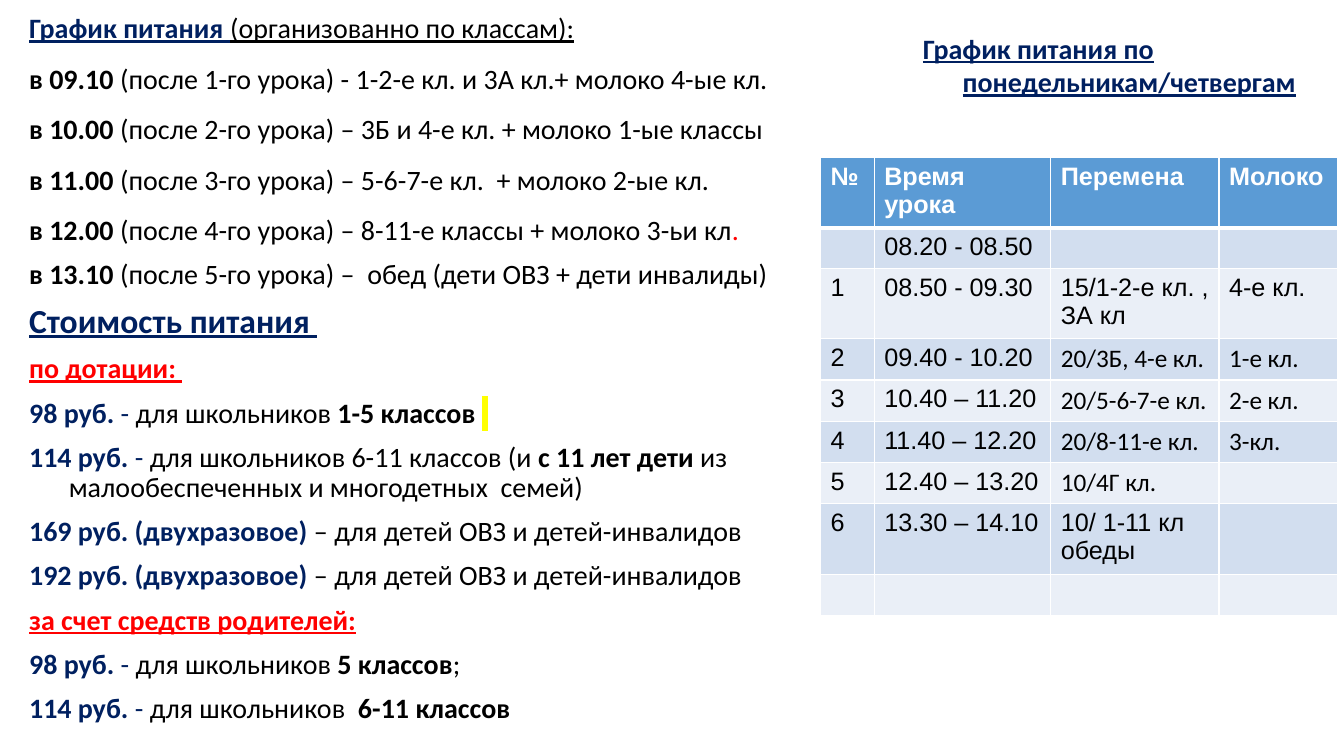
"""Builds the school meals slide: serving times, prices and the Monday/Thursday timetable."""
from dataclasses import dataclass
from typing import Optional

import lxml.etree
import pptx
import pptx.dml.color
import pptx.enum.text
import pptx.oxml.ns
import pptx.util

Cm = pptx.util.Cm
Pt = pptx.util.Pt
RGBColor = pptx.dml.color.RGBColor
qn = pptx.oxml.ns.qn

NAVY = RGBColor(0x00, 0x20, 0x60)
RED = RGBColor(0xFF, 0x00, 0x00)
BLACK = RGBColor(0x00, 0x00, 0x00)
WHITE = RGBColor(0xFF, 0xFF, 0xFF)
YELLOW = RGBColor(0xFF, 0xFF, 0x00)
HEADER_BLUE = RGBColor(0x5B, 0x9B, 0xD5)
BAND_DARK = RGBColor(0xD2, 0xDE, 0xEF)
BAND_LIGHT = RGBColor(0xEA, 0xEF, 0xF7)


@dataclass(frozen=True)
class Span:
    text: str
    bold: bool = False
    color: RGBColor = BLACK
    underline: bool = False
    size: int = 20
    highlight: Optional[RGBColor] = None
    break_after: bool = False


@dataclass(frozen=True)
class Line:
    spans: tuple[Span, ...]
    spacing: float = 0.9
    before: int = 10


def serving(time: str, *rest: Span) -> Line:
    return Line((Span(time, bold=True), *rest), spacing=1.5, before=0)


def heading(text: str, color: RGBColor, size: int = 20) -> Line:
    return Line((Span(text, True, color, True, size),))


def price(amount: str, *rest: Span) -> Line:
    return Line((Span(amount, True, NAVY), Span(" - ", color=NAVY), *rest))


def double_meal(amount: str) -> Line:
    return Line((Span(f"{amount} (двухразовое) ", True, NAVY),
                 Span("– для детей ОВЗ и детей-инвалидов")))


MEAL_LINES = (
    Line((Span("График питания", True, NAVY, True), Span(" ", color=NAVY, underline=True),
          Span("(организованно по классам):", underline=True))),
    serving("в 09.10 ", Span("(после 1-го урока) - 1-2-е кл. и 3А кл.+ молоко 4-ые кл.")),
    serving("в 10.00 ", Span("(после 2-го урока) – 3Б и 4-е кл. + молоко 1-ые классы")),
    serving("в 11.00 ", Span("(после 3-го урока) – 5-6-7-е кл.  + молоко 2-ые кл.")),
    serving("в 12.00 ", Span("(после 4-го урока) – 8-11-е классы + молоко 3-ьи кл"),
            Span(".", color=RED)),
    Line((Span("в 13.10 ", True), Span("(после 5-го урока) –  обед (дети ОВЗ + дети инвалиды)"))),
    heading("Стоимость питания ", NAVY, 24),
    heading("по дотации: ", RED),
    price("98 руб.", Span("для школьников "), Span("1-5 классов ", True),
          Span(" ", True, highlight=YELLOW)),
    price("114 руб.", Span("для школьников 6-11 классов (и"), Span(" с 11 лет дети ", True),
          Span("из", break_after=True), Span("малообеспеченных и многодетных  семей)")),
    double_meal("169 руб."),
    double_meal("192 руб."),
    heading("за счет средств родителей:", RED),
    price("98 руб.", Span("для школьников "), Span("5 классов", True), Span(";")),
    price("114 руб.", Span("для школьников "), Span(" 6-11 классов", True)),
)

TIMETABLE = (
    ("№", "Время урока", "Перемена", "Молоко"),
    ("", "08.20 - 08.50", "", ""),
    ("1", "08.50 - 09.30", "15/1-2-е кл. ,\nЗА кл", "4-е кл."),
    ("2", "09.40 - 10.20", "20/3Б, 4-е кл.", "1-е кл."),
    ("3", "10.40 – 11.20", "20/5-6-7-е кл.", "2-е кл."),
    ("4", "11.40 – 12.20", "20/8-11-е кл.", "3-кл."),
    ("5", "12.40 – 13.20", "10/4Г кл.", ""),
    ("6", "13.30 – 14.10", "10/ 1-11 кл обеды", ""),
    ("", "", "", ""),
)
COLUMN_WIDTHS = (1.35, 4.45, 4.24, 3.0)
ROW_HEIGHT = 1.04
CALIBRI_ROWS = range(3, 7)


def add_color(parent: lxml.etree._Element, color: RGBColor) -> None:
    lxml.etree.SubElement(parent, qn("a:srgbClr")).set("val", str(color))


def format_run(run: pptx.text.text._Run, span: Span, font_name: str = "Calibri") -> None:
    run.font.name = font_name
    run.font.size = Pt(span.size)
    run.font.bold = span.bold
    run.font.underline = span.underline
    run.font.color.rgb = span.color
    if span.highlight is not None:
        marker = lxml.etree.Element(qn("a:highlight"))
        add_color(marker, span.highlight)
        run.font.fill._xPr.find(qn("a:solidFill")).addnext(marker)


def hang(paragraph: pptx.text.text._Paragraph) -> None:
    properties = paragraph._p.get_or_add_pPr()
    properties.set("marL", str(Cm(1)))
    properties.set("indent", str(-Cm(1)))
    lxml.etree.SubElement(properties, qn("a:buNone"))


def write_line(paragraph: pptx.text.text._Paragraph, line: Line) -> None:
    paragraph.line_spacing = line.spacing
    paragraph.space_before = Pt(line.before)
    hang(paragraph)
    for span in line.spans:
        run = paragraph.add_run()
        run.text = span.text
        format_run(run, span)
        if span.break_after:
            paragraph.add_line_break()


def add_meals(slide: pptx.slide.Slide) -> None:
    meals = slide.placeholders[1]
    meals.left, meals.top, meals.width, meals.height = Cm(0.48), Cm(0.23), Cm(23.95), Cm(18.39)
    frame = meals.text_frame
    frame.word_wrap = True
    frame.auto_size = pptx.enum.text.MSO_AUTO_SIZE.NONE
    frame.vertical_anchor = pptx.enum.text.MSO_ANCHOR.TOP
    for index, line in enumerate(MEAL_LINES):
        write_line(frame.add_paragraph() if index else frame.paragraphs[0], line)


def add_timetable_heading(slide: pptx.slide.Slide) -> None:
    frame = slide.shapes.add_textbox(Cm(23.01), Cm(0.66), Cm(9.96), Cm(1.96)).text_frame
    frame.word_wrap = True
    frame.text = "График питания по понедельникам/четвергам"
    hang(frame.paragraphs[0])
    format_run(frame.paragraphs[0].runs[0], Span("", True, NAVY, True))


def set_borders(cell: pptx.table._Cell, row: int) -> None:
    properties = cell._tc.get_or_add_tcPr()
    widths = {"L": 1, "R": 1, "T": 3 if row == 1 else 1, "B": 3 if row == 0 else 1}
    for position, (side, width) in enumerate(widths.items()):
        border = lxml.etree.Element(qn(f"a:ln{side}"))
        border.set("w", str(Pt(width)))
        add_color(lxml.etree.SubElement(border, qn("a:solidFill")), WHITE)
        properties.insert(position, border)


def add_timetable(slide: pptx.slide.Slide) -> None:
    timetable = slide.shapes.add_table(
        len(TIMETABLE), len(COLUMN_WIDTHS), Cm(20.68), Cm(3.96),
        Cm(sum(COLUMN_WIDTHS)), Cm(ROW_HEIGHT * len(TIMETABLE))).table
    for column, width in zip(timetable.columns, COLUMN_WIDTHS):
        column.width = Cm(width)
    for row, texts in enumerate(TIMETABLE):
        timetable.rows[row].height = Cm(0.99 if row == 1 else ROW_HEIGHT)
        header = row == 0
        band = HEADER_BLUE if header else BAND_DARK if row % 2 else BAND_LIGHT
        style = Span("", bold=header, color=WHITE if header else BLACK, size=18)
        for column, text in enumerate(texts):
            cell = timetable.cell(row, column)
            cell.fill.solid()
            cell.fill.fore_color.rgb = band
            set_borders(cell, row)
            cell.text_frame.text = text
            font_name = "Calibri" if column >= 2 and row in CALIBRI_ROWS else "Arial"
            for paragraph in cell.text_frame.paragraphs:
                for run in paragraph.runs:
                    format_run(run, style, font_name)


def main() -> None:
    presentation = pptx.Presentation()
    presentation.slide_width, presentation.slide_height = Cm(33.87), Cm(19.05)
    slide = presentation.slides.add_slide(presentation.slide_layouts[1])
    empty_title = slide.shapes.title._element
    empty_title.getparent().remove(empty_title)
    add_meals(slide)
    add_timetable_heading(slide)
    add_timetable(slide)
    presentation.save("out.pptx")


if __name__ == "__main__":
    main()
